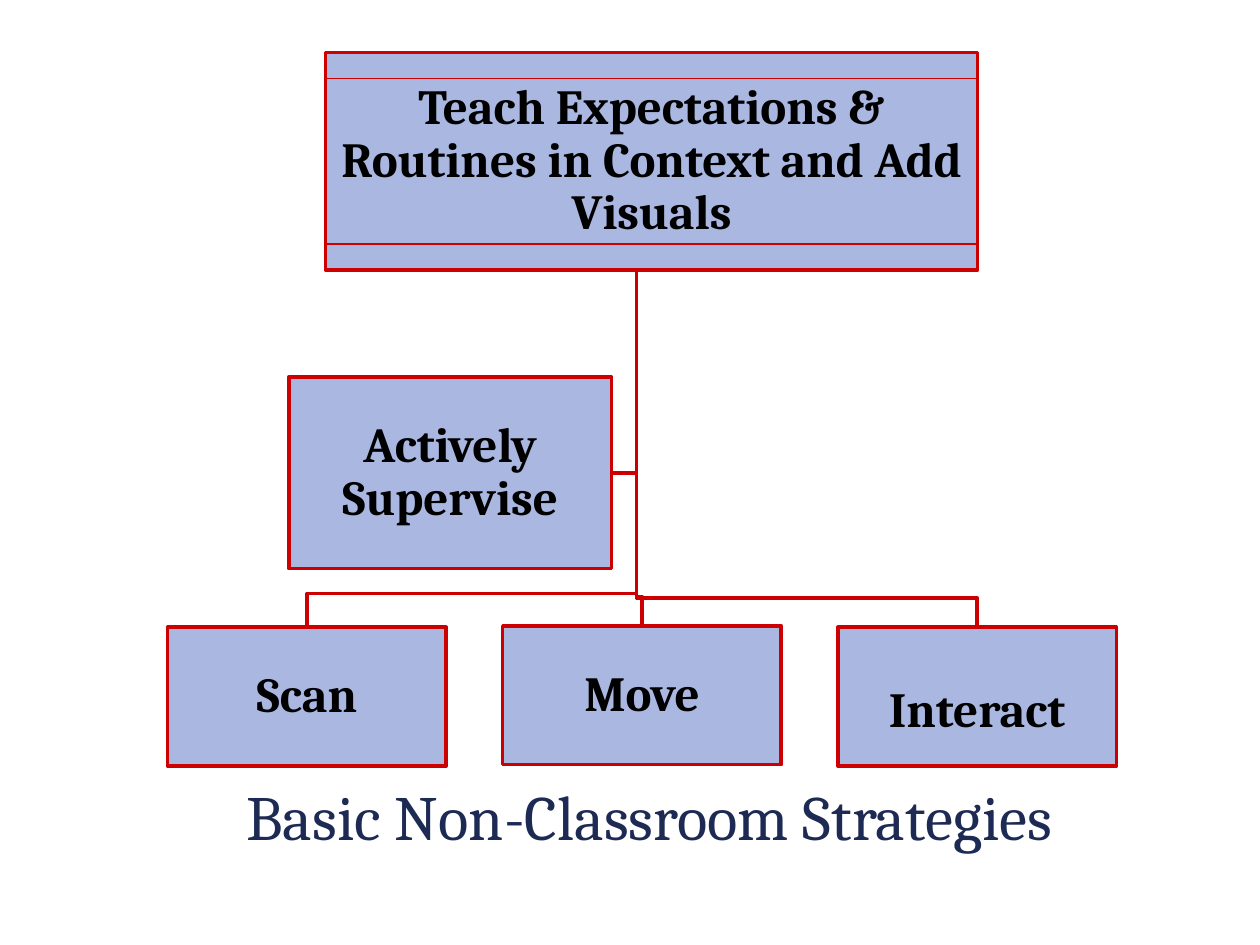
from pptx import Presentation
from pptx.dml.color import RGBColor
from pptx.enum.shapes import MSO_SHAPE
from pptx.enum.text import MSO_ANCHOR, MSO_AUTO_SIZE, PP_ALIGN
from pptx.util import Pt

COLORS = {"navy": "1D2A53", "red": "CC0000", "blue": "A9B7E1", "black": "000000"}

prs = Presentation()
prs.slide_width, prs.slide_height = Pt(720), Pt(540)
s = prs.slides.add_slide(prs.slide_layouts[5])


def write(sp, text, size=28, color="black", bold=True, spacing=0.9,
          inset_x=1.4, inset_y=1.4, extra_top=0):
    tf = sp.text_frame
    tf.word_wrap = True
    tf.auto_size = MSO_AUTO_SIZE.NONE
    tf.vertical_anchor = MSO_ANCHOR.MIDDLE
    tf.margin_left = tf.margin_right = Pt(inset_x)
    tf.margin_top, tf.margin_bottom = Pt(inset_y + extra_top), Pt(inset_y)
    p = tf.paragraphs[0]
    p.alignment = PP_ALIGN.CENTER
    p.line_spacing = spacing
    r = p.add_run()
    r.text = text
    r.font.name, r.font.size, r.font.bold = "Cambria", Pt(size), bold
    r.font.color.rgb = RGBColor.from_string(COLORS[color])


def outline(sp, fill=None, width=2):
    sp.shadow.inherit = False
    if fill:
        sp.fill.solid()
        sp.fill.fore_color.rgb = RGBColor.from_string(COLORS[fill])
    else:
        sp.fill.background()
    sp.line.color.rgb = RGBColor.from_string(COLORS["red"])
    sp.line.width = Pt(width)


# Title below the chart
title = s.shapes.title
title.left, title.top, title.width, title.height = Pt(82), Pt(430), Pt(578), Pt(72)
write(title, "Basic Non-Classroom Strategies", size=36, color="navy",
      bold=False, spacing=1.0, inset_x=7.2, inset_y=3.6)

# Branches from the trunk to each box
TRUNK = 363.7
branches = [
    [(TRUNK, 181.5), (TRUNK, 270.2), (349.5, 270.2)],
    [(TRUNK, 181.5), (TRUNK, 341.7), (558.4, 341.7), (558.4, 358.4)],
    [(TRUNK, 181.5), (TRUNK, 340.9), (366.9, 340.9), (366.9, 357.6)],
    [(TRUNK, 154.2), (TRUNK, 339.2), (175.4, 339.2), (175.4, 358.4)],
]
for points in branches:
    (x, y), *rest = points
    builder = s.shapes.build_freeform(Pt(x), Pt(y))
    builder.add_line_segments([(Pt(px), Pt(py)) for px, py in rest], close=False)
    outline(builder.convert_to_shape())

# Top box: filled panel with a framed label inside
panel = s.shapes.add_shape(MSO_SHAPE.RECTANGLE, Pt(186), Pt(30), Pt(372.7), Pt(124.4))
outline(panel, fill="blue")
label = s.shapes.add_shape(MSO_SHAPE.RECTANGLE, Pt(186), Pt(44.7), Pt(372.7), Pt(94.8))
outline(label, width=0.75)
write(label, "Teach Expectations & Routines in Context and Add Visuals")

# Lower boxes: text, left, top, width, height, extra top inset
boxes = [
    ("Scan", 95.8, 358.4, 159.2, 79.4, 0),
    ("Move", 287.3, 357.6, 159.2, 79.4, 0),
    ("Interact", 478.8, 358.4, 159.2, 79.4, 17),
    ("Actively Supervise", 165, 215.4, 184.5, 109.5, 0),
]
for text, left, top, width, height, extra_top in boxes:
    box = s.shapes.add_shape(MSO_SHAPE.RECTANGLE, Pt(left), Pt(top), Pt(width), Pt(height))
    outline(box, fill="blue")
    write(box, text, extra_top=extra_top)

prs.save("out.pptx")
